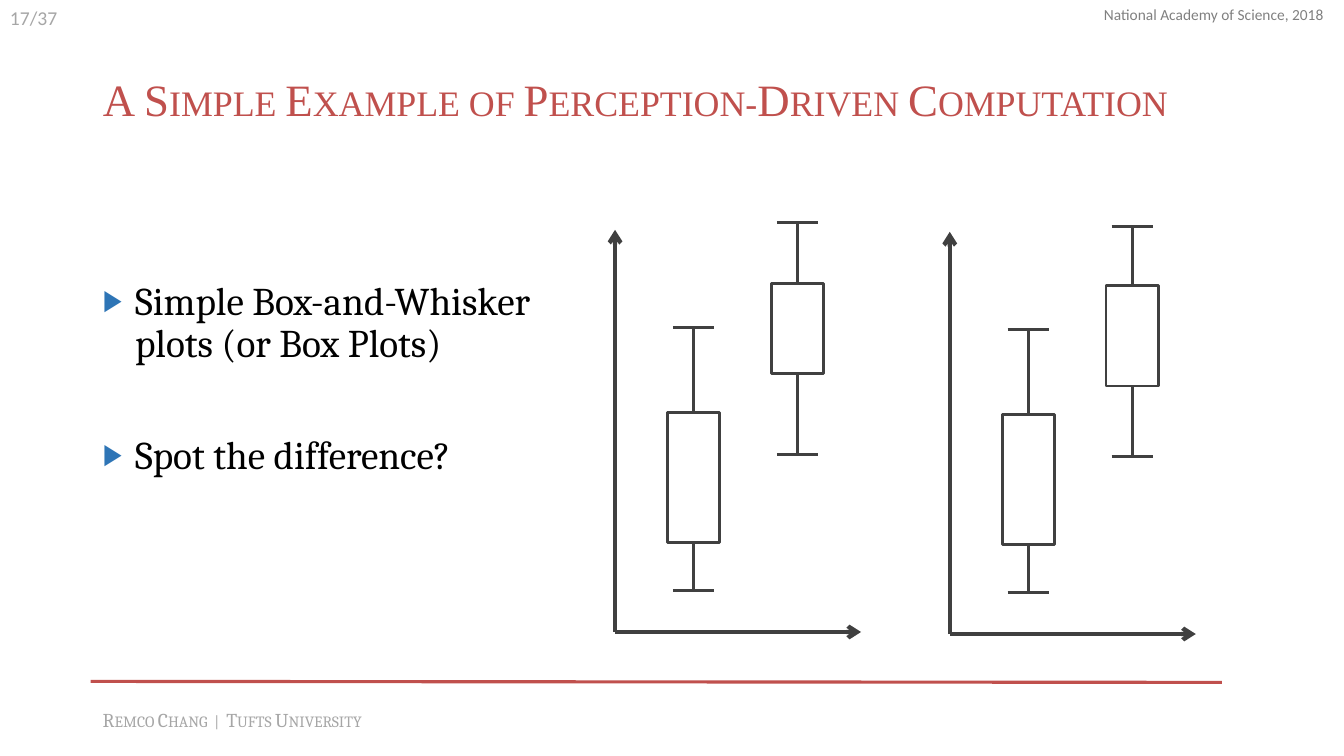
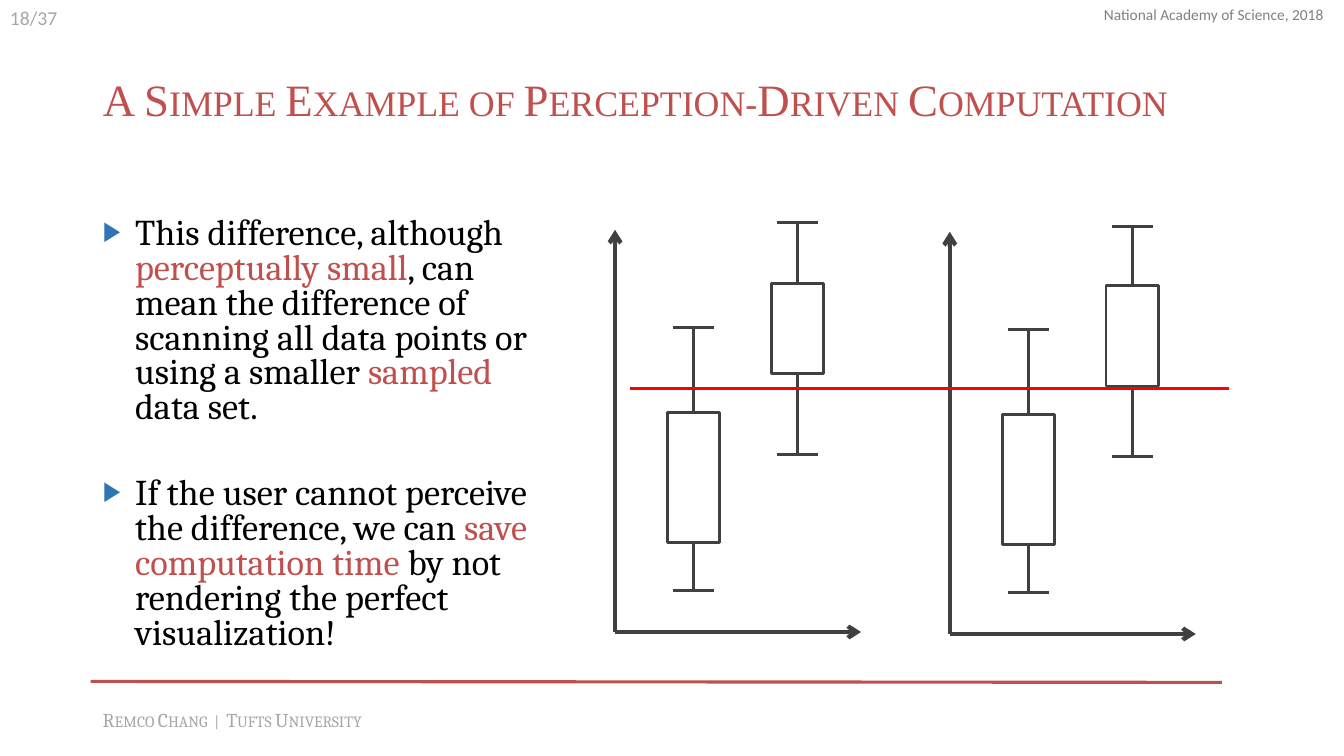
from lxml import etree
from pptx import Presentation
from pptx.dml.color import RGBColor
from pptx.enum import shapes, text
from pptx.oxml import ns
from pptx.util import Inches, Pt

COLORS = {"accent": "C0504D", "ink": "000000", "axis": "404040", "bullet": "2E75B6",
          "footer": "A6A6A6", "venue": "808080", "marker": "FF0000"}
SERIF, SANS, TITLE_FONT = "Cambria", "Calibri", "Times New Roman"
TITLE = "A Simple Example of Perception-Driven Computation"
PAGE_COUNT = 37

# Each box: centre from the axis, then upper cap, box top, box bottom and lower cap
# measured down from the top of the plot.
LOW_BOX = (0.78, 0.97, 1.81, 3.1, 3.58)
HIGH_BOX = (1.81, -0.07, 0.53, 1.43, 2.23)
HIGH_BOX_SAMPLED = (1.81, -0.05, 0.53, 1.53, 2.23)
BOX_WIDTH, CAP_WIDTH = 0.52, 0.41
AXIS_WIDTH, AXIS_HEIGHT = 2.44, 3.99


def rgb(name):
    return RGBColor.from_string(COLORS[name])


def add_child(parent, tag, **attributes):
    return etree.SubElement(parent, ns.qn(tag), attributes)


def add_text(paragraph, words, size, font, color, small_caps=False):
    run = paragraph.add_run()
    run.text = words
    run.font.size = Pt(size)
    run.font.name = font
    run.font.color.rgb = rgb(color)
    if small_caps:
        run._r.get_or_add_rPr().set("cap", "small")


def add_label(slide, box, words, wrap=True, **style):
    frame = slide.shapes.add_textbox(*map(Inches, box)).text_frame
    frame.word_wrap = wrap
    add_text(frame.paragraphs[0], words, **style)


def add_line(slide, start, end, color="axis", width=2, arrow=False):
    line = slide.shapes.add_connector(shapes.MSO_CONNECTOR.STRAIGHT,
                                      *map(Inches, (*start, *end)))
    line.line.color.rgb = rgb(color)
    line.line.width = Pt(width)
    if arrow:
        add_child(line.line._get_or_add_ln(), "a:tailEnd", type="arrow")
    add_child(line._element.spPr, "a:effectLst")
    return line


def place(placeholder, left, top, width, height):
    placeholder.left, placeholder.top = Inches(left), Inches(top)
    placeholder.width, placeholder.height = Inches(width), Inches(height)
    frame = placeholder.text_frame
    frame.word_wrap = True
    frame.auto_size = text.MSO_AUTO_SIZE.NONE
    return frame


def add_frame(slide, page):
    """Title, rule and the small texts that every slide carries."""
    heading = place(slide.shapes.title, 0.92, 0.56, 11.22, 0.91)
    heading.vertical_anchor = text.MSO_ANCHOR.MIDDLE
    paragraph = heading.paragraphs[0]
    paragraph.alignment = text.PP_ALIGN.LEFT
    paragraph.line_spacing = 0.9
    add_text(paragraph, TITLE, 32, TITLE_FONT, "accent", small_caps=True)
    add_line(slide, (0.9, 6.76), (12.12, 6.77), "accent", 2.25)
    add_label(slide, (0.92, 6.97, 3.51, 0.34), "Remco Chang  |  Tufts University",
              size=14, font=SERIF, color="footer", small_caps=True)
    add_label(slide, (0, 0.01, 2.78, 0.34), f"{page}/{PAGE_COUNT}",
              size=14, font=SANS, color="footer")
    add_label(slide, (10.85, 0, 2.46, 0.29), "National Academy of Science, 2018",
              wrap=False, size=11, font=SANS, color="venue")


def add_bullets(slide, points, size, line_spacing, gap, inset):
    """Each point is a list of (words, colour) pairs."""
    frame = place(slide.placeholders[1], 0.92, 1.62, 4.71, 5.06)
    frame.margin_top = Inches(inset)
    frame.vertical_anchor = text.MSO_ANCHOR.TOP
    for index, point in enumerate(points):
        paragraph = frame.add_paragraph() if index else frame.paragraphs[0]
        paragraph.line_spacing = line_spacing
        paragraph.space_before = Pt(gap if index else 0)
        properties = paragraph._p.get_or_add_pPr()
        properties.set("marL", str(Inches(0.32)))
        properties.set("indent", str(-Inches(0.32)))
        add_child(add_child(properties, "a:buClr"), "a:srgbClr", val=COLORS["bullet"])
        add_child(properties, "a:buSzPct", val="75000")
        add_child(properties, "a:buChar", char="▶")
        for words, color in point:
            add_text(paragraph, words, size, SERIF, color)


def add_box(slide, axis_x, plot_top, box):
    center = axis_x + box[0]
    upper, top, bottom, lower = (plot_top + offset for offset in box[1:])
    body = slide.shapes.add_shape(
        shapes.MSO_SHAPE.RECTANGLE, Inches(center - BOX_WIDTH / 2), Inches(top),
        Inches(BOX_WIDTH), Inches(bottom - top))
    body.shadow.inherit = False
    body.fill.background()
    body.line.color.rgb = rgb("axis")
    body.line.width = Pt(2)
    for edge, cap, site in ((top, upper, 0), (bottom, lower, 2)):
        whisker = add_line(slide, (center, edge), (center, cap))
        whisker.begin_connect(body, site)
        add_line(slide, (center - CAP_WIDTH / 2, cap), (center + CAP_WIDTH / 2, cap))


def add_box_plot(slide, left, top, boxes):
    origin = (left, top + AXIS_HEIGHT)
    for tip in ((left, top), (left + AXIS_WIDTH, origin[1])):
        add_line(slide, origin, tip, width=3, arrow=True)
    for box in boxes:
        add_box(slide, left, top, box)


def add_comparison_slide(deck, page, points, **list_style):
    slide = deck.slides.add_slide(deck.slide_layouts[1])
    add_frame(slide, page)
    add_bullets(slide, points, **list_style)
    add_box_plot(slide, 9.42, 2.3, (LOW_BOX, HIGH_BOX_SAMPLED))
    add_box_plot(slide, 6.1, 2.28, (LOW_BOX, HIGH_BOX))
    return slide


def main():
    deck = Presentation()
    deck.slide_width, deck.slide_height = Inches(13.33), Inches(7.5)

    add_comparison_slide(
        deck, 17,
        [[("Simple Box-and-Whisker plots (or Box Plots)", "ink")],
         [("Spot the difference?", "ink")]],
        size=28, line_spacing=0.9, gap=50, inset=1.17)

    consequence = add_comparison_slide(
        deck, 18,
        [[("This difference, although ", "ink"), ("perceptually small", "accent"),
          (", can mean the difference of scanning all data points or using a smaller ",
           "ink"),
          ("sampled", "accent"), (" data set.", "ink")],
         [("If the user cannot perceive the difference, we can ", "ink"),
          ("save computation time", "accent"),
          (" by not rendering the perfect visualization!", "ink")]],
        size=25.9, line_spacing=0.8, gap=36.5, inset=0.54)
    add_line(consequence, (6.25, 3.85), (12.19, 3.85), "marker", 2.25)

    deck.save("out.pptx")


if __name__ == "__main__":
    main()
